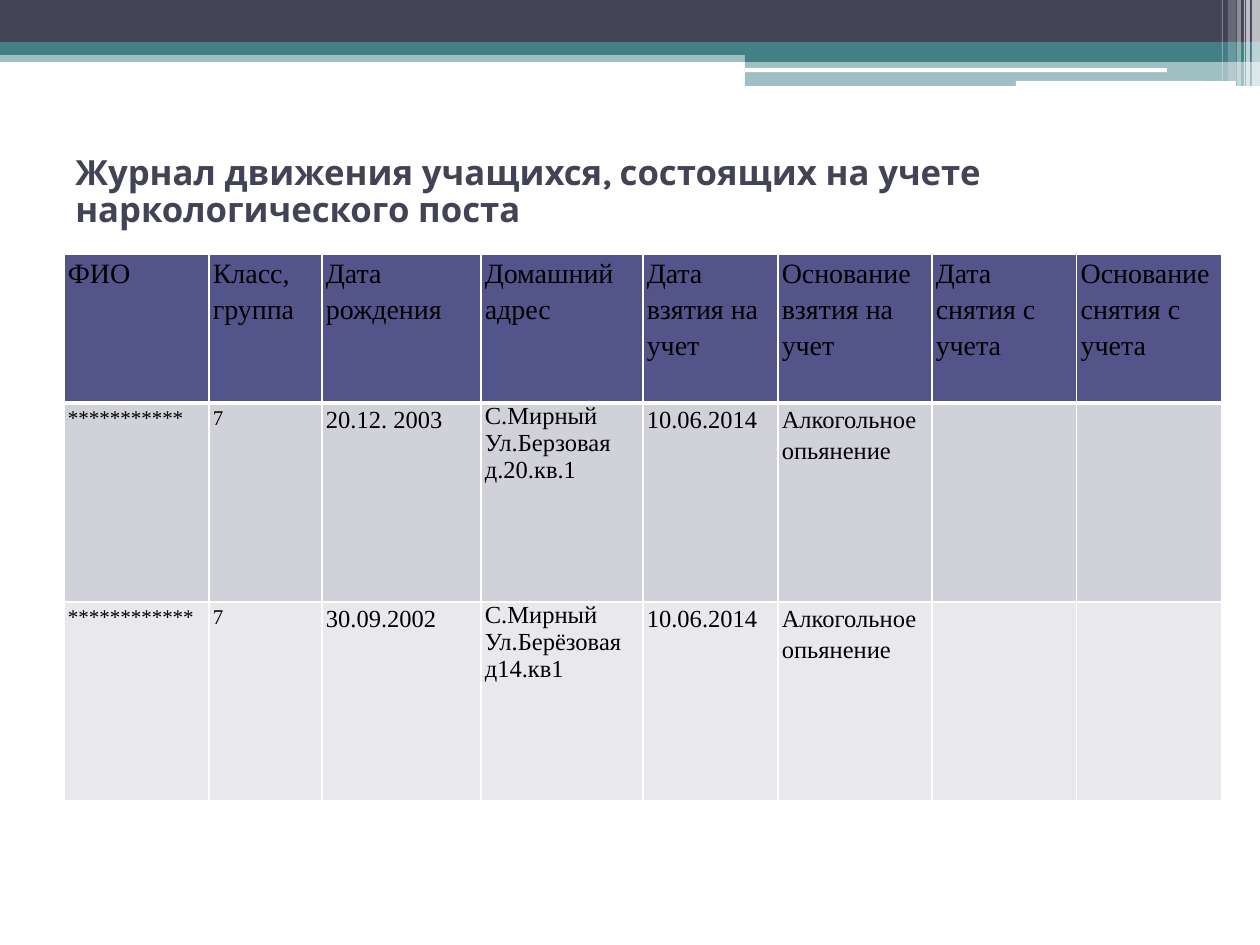
from lxml.etree import SubElement as Sub
from pptx import Presentation
from pptx.dml.color import RGBColor as RGB
from pptx.enum.shapes import MSO_SHAPE as Kind
from pptx.enum.text import MSO_ANCHOR as Anchor
from pptx.oxml.ns import qn
from pptx.util import Pt

PX = 914400 // 126
DARK, TEAL, WHITE = RGB(0x42, 0x44, 0x56), RGB(0x43, 0x80, 0x86), RGB(255, 255, 255)
HEAD, BLACK = RGB(0x53, 0x54, 0x8A), RGB(0, 0, 0)
BANDS = [HEAD, RGB(0xD1, 0xD1, 0xDA), RGB(0xE9, 0xE9, 0xED)]
SERIF = "Times New Roman"

TITLE = "Журнал движения учащихся, состоящих на учете наркологического поста"
ROWS = [
    ["ФИО", "Класс, группа", "Дата рождения", "Домашний адрес",
     "Дата взятия на учет", "Основание взятия на учет",
     "Дата снятия с учета", "Основание снятия с учета"],
    ["***********", "7", "20.12. 2003", "С.Мирный\nУл.Берзовая д.20.кв.1",
     "10.06.2014", "Алкогольное опьянение", "", ""],
    ["************", "7", "30.09.2002", "С.Мирный\nУл.Берёзовая д14.кв1",
     "10.06.2014", "Алкогольное опьянение", "", ""],
]
WIDTHS = [145, 113, 159, 162, 135, 154, 145, 145]
HEIGHTS = [149, 199, 199]
ADDRESS = 3

# left, top, width, height, colour, opacity in percent
BARS = [
    (0, 50, 1260, 12, TEAL, 50),
    (0, 0, 1260, 43, DARK, 100),
    (0, 42, 1260, 13, TEAL, 100),
    (745, 49, 515, 13, TEAL, 100),
    (745, 61, 515, 25, TEAL, 50),
]
PILLS = [(745, 68, 422, 4, WHITE, 100), (1016, 81, 220, 5, WHITE, 100)]
STRIPES = [
    (1252, 0, 8, 86, WHITE, 65),
    (1246, 0, 4, 86, WHITE, 65),
    (1244, 0, 1, 86, WHITE, 60),
    (1237, 0, 4, 86, WHITE, 40),
    (1228, 0, 8, 81, WHITE, 20),
    (1222, 0, 1, 81, WHITE, 30),
]


def box(*sides):
    return [side * PX for side in sides]


def draw(slide, kind, bars):
    for *sides, color, alpha in bars:
        bar = slide.shapes.add_shape(kind, *box(*sides))
        bar.shadow.inherit = False
        bar.line.fill.background()
        bar.fill.solid()
        bar.fill.fore_color.rgb = color
        if alpha < 100:
            tint = bar.fill._xPr.find(qn("a:solidFill"))[0]
            Sub(tint, qn("a:alpha"), val=str(alpha * 1000))


def edge(cell, head):
    props = cell._tc.get_or_add_tcPr()
    for at, side in enumerate(("lnL", "lnR", "lnT", "lnB")):
        wide = 3 if head and side == "lnB" else 1
        line = Sub(props, qn("a:" + side), w=str(Pt(wide)))
        Sub(Sub(line, qn("a:solidFill")), qn("a:srgbClr"), val=str(WHITE))
        props.remove(line)
        props.insert(at, line)


def fill_cell(cell, text, row, col):
    cell.fill.solid()
    cell.fill.fore_color.rgb = BANDS[row]
    cell.margin_left = cell.margin_right = 4 * PX
    cell.margin_top = cell.margin_bottom = 0
    edge(cell, row == 0)
    cell.text_frame.text = text
    for para in cell.text_frame.paragraphs:
        font = para.font
        font.name, font.bold = SERIF, False
        font.color.rgb = BLACK
        font.size = Pt(16 if row == 0 else 12 if col < 2 else 14)
        para.line_spacing = 1.0 if row and col == ADDRESS else 1.15


def main():
    prs = Presentation()
    prs.slide_width, prs.slide_height = box(1260, 945)
    slide = prs.slides.add_slide(prs.slide_layouts[6])

    # Header bands and the stripes at the right
    draw(slide, Kind.RECTANGLE, BARS)
    draw(slide, Kind.ROUNDED_RECTANGLE, PILLS)
    draw(slide, Kind.RECTANGLE, STRIPES)

    # Title
    frame = slide.shapes.add_textbox(*box(63, 157, 1134, 147)).text_frame
    frame.word_wrap = True
    frame.vertical_anchor = Anchor.TOP
    frame.margin_top = 0
    frame.text = TITLE
    para = frame.paragraphs[0]
    para.line_spacing = 0.87
    para.font.name, para.font.size, para.font.bold = "Karla", Pt(19.8), True
    para.font.color.rgb = DARK

    # Register of pupils
    spot = box(64, 254, sum(WIDTHS), sum(HEIGHTS))
    table = slide.shapes.add_table(len(ROWS), len(WIDTHS), *spot).table
    for col, wide in zip(table.columns, WIDTHS):
        col.width = wide * PX
    for r, (texts, high) in enumerate(zip(ROWS, HEIGHTS)):
        table.rows[r].height = high * PX
        for c, text in enumerate(texts):
            fill_cell(table.cell(r, c), text, r, c)

    prs.save("out.pptx")


if __name__ == "__main__":
    main()
